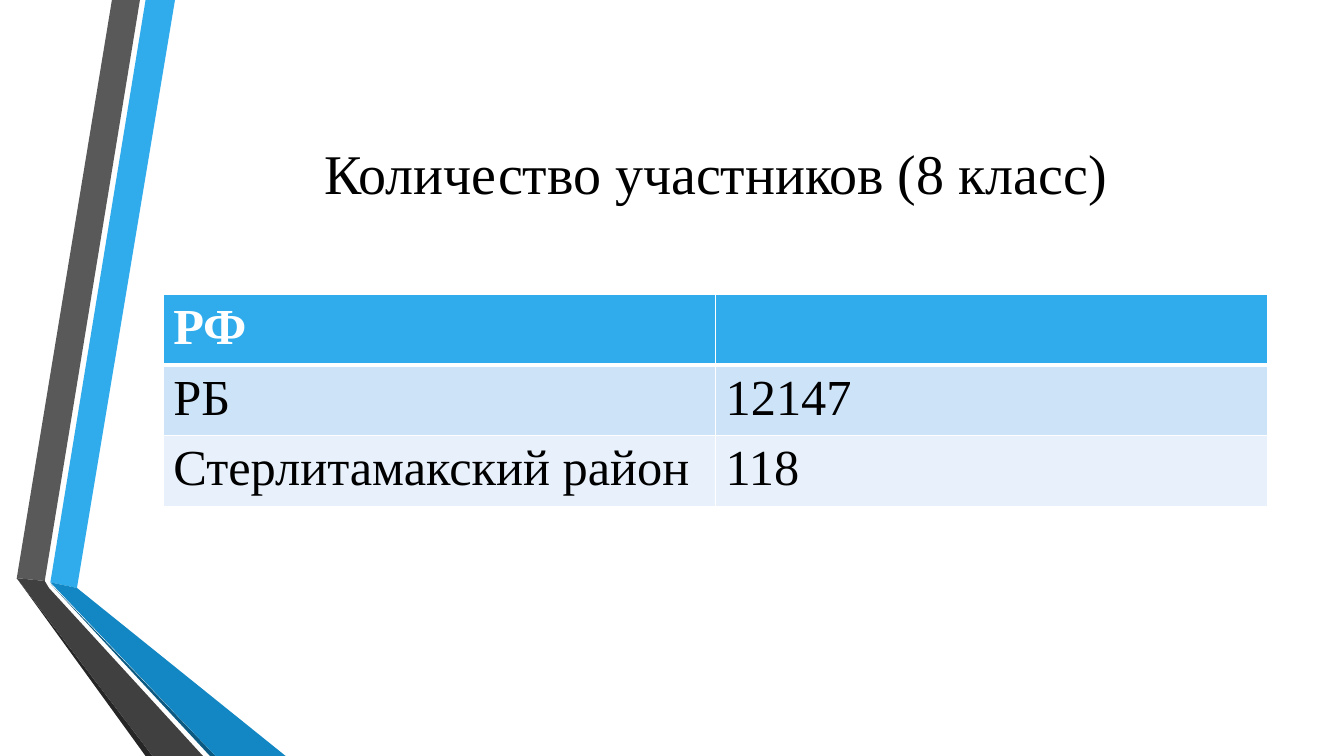
from pptx import Presentation
from pptx.dml.color import RGBColor
from pptx.enum.text import MSO_ANCHOR, PP_ALIGN
from pptx.oxml import parse_xml
from pptx.oxml.ns import nsdecls
from pptx.util import Pt

MIDDLE = MSO_ANCHOR.MIDDLE
CENTER = PP_ALIGN.CENTER
FONT = "Times New Roman"
WHITE, BLACK, BLUE = "FFFFFF", "000000", "30ACEC"
LEFT, WIDTH = 116.6, 789.1

BANDS = [
    (BLUE, [(36, 416.2), (55.4, 419.8), (124.6, 0), (104.4, 0)]),
    ("595959", [(100.1, 0), (79.9, 0), (11.5, 412.6), (31.7, 415.4)]),
    ("262626", [(11.5, 412.6), (104.4, 540), (108.7, 540)]),
    ("0C5A82", [(36, 416.9), (149.8, 540), (154.1, 540)]),
    ("1287C3", [(36, 416.2), (154.1, 540), (203.8, 540), (55.4, 419.8)]),
    ("404040", [(145.4, 540), (34.6, 419.8), (31.7, 415.4), (11.5, 412.6),
                (108.7, 540)]),
]
ROWS = [
    (BLUE, WHITE, ["РФ", ""]),
    ("CDE3F8", BLACK, ["РБ", "12147"]),
    ("E8F1FB", BLACK, ["Стерлитамакский район", "118"]),
]


def paint(fill, color):
    """Give a fill one solid colour."""
    fill.solid()
    fill.fore_color.rgb = RGBColor.from_string(color)


def write(para, text, size, color, bold=False):
    """Add one run to a paragraph."""
    run = para.add_run()
    run.text = text
    font = run.font
    font.name, font.size, font.bold = FONT, Pt(size), bold
    paint(font.fill, color)


def add_band(slide, color, points):
    """Draw one filled outline of the ribbon."""
    pen = slide.shapes.build_freeform(*points[0], scale=Pt(1))
    pen.add_line_segments(points[1:], close=True)
    band = pen.convert_to_shape()
    band.shadow.inherit = False
    paint(band.fill, color)
    band.line.fill.background()


def add_title(slide, text):
    """Place the centred title."""
    box = slide.shapes.add_textbox(Pt(LEFT), Pt(54), Pt(WIDTH), Pt(138.2))
    frame = box.text_frame
    frame.word_wrap = True
    frame.vertical_anchor = MIDDLE
    para = frame.paragraphs[0]
    para.alignment = CENTER
    write(para, text, 40, BLACK)


def add_edge(cell, side, width):
    """Draw one white border of a cell."""
    cell._tc.get_or_add_tcPr().append(parse_xml(
        f'<a:ln{side} {nsdecls("a")} w="{Pt(width)}"><a:solidFill>'
        f'<a:srgbClr val="{WHITE}"/></a:solidFill></a:ln{side}>'))


def add_grid(slide, rows):
    """Build the table with a bold head row."""
    high = 46.8
    table = slide.shapes.add_table(
        len(rows), 2, Pt(LEFT), Pt(210.4), Pt(WIDTH), Pt(high * len(rows))).table
    for i, (back, color, texts) in enumerate(rows):
        table.rows[i].height = Pt(high)
        for j, text in enumerate(texts):
            cell = table.cell(i, j)
            for side in "LRTB":
                thick = (i, side) in ((0, "B"), (1, "T"))
                add_edge(cell, side, 3 if thick else 1)
            paint(cell.fill, back)
            if text:
                write(cell.text_frame.paragraphs[0], text, 36, color, i == 0)


def main():
    """Build and save the slide."""
    deck = Presentation()
    deck.slide_width, deck.slide_height = Pt(960), Pt(540)
    slide = deck.slides.add_slide(deck.slide_layouts[6])
    paint(slide.background.fill, WHITE)
    for color, points in BANDS:
        add_band(slide, color, points)
    add_title(slide, "Количество участников (8 класс)")
    add_grid(slide, ROWS)
    deck.save("out.pptx")


if __name__ == "__main__":
    main()
